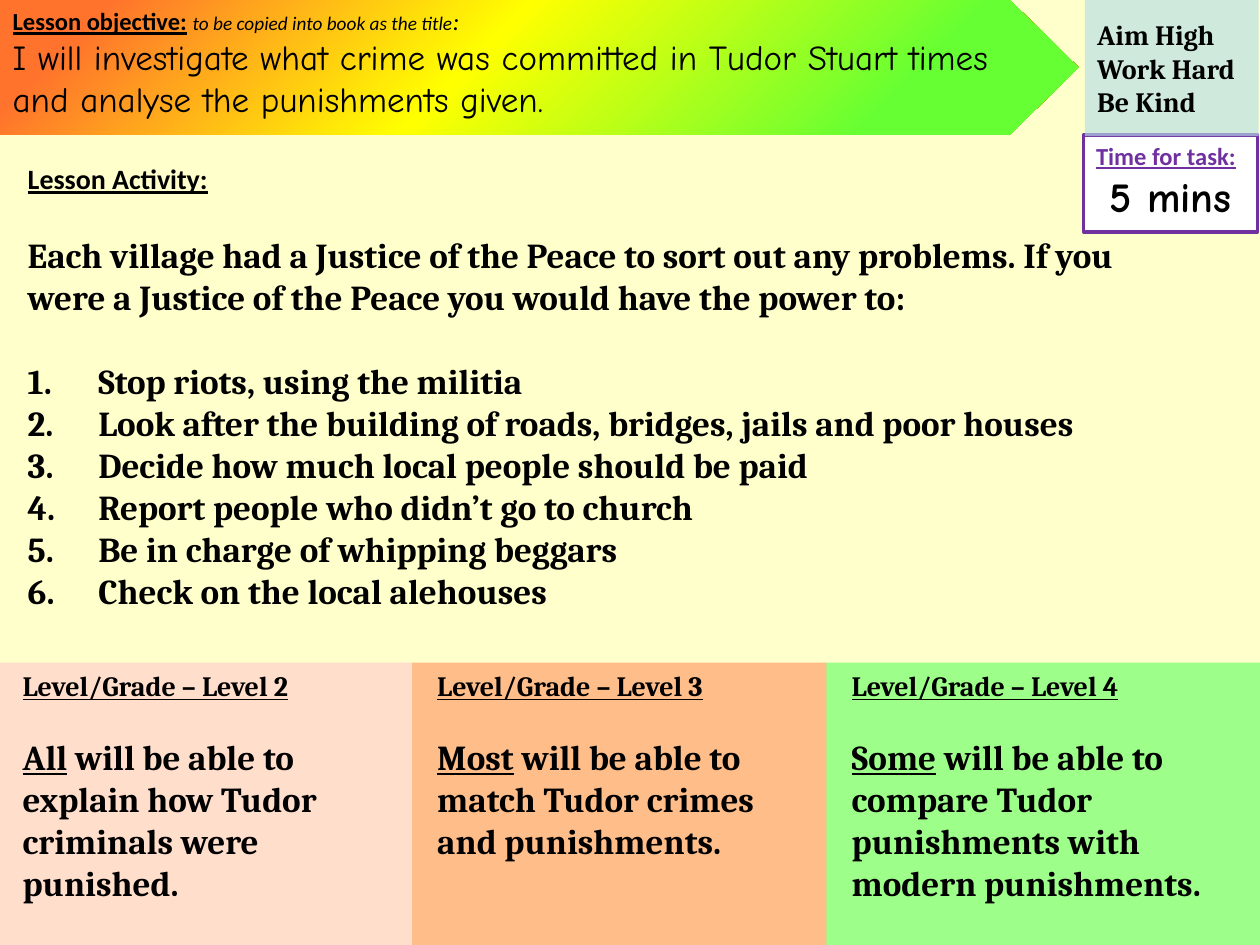
"""Build the Tudor crime and punishment lesson slide."""
from dataclasses import dataclass, replace

import lxml.etree
import pptx
import pptx.dml.color
import pptx.enum.shapes
import pptx.enum.text
import pptx.oxml
import pptx.oxml.ns
import pptx.util
from pptx.util import Inches

ALIGN = pptx.enum.text.PP_ALIGN
ANCHOR = pptx.enum.text.MSO_ANCHOR
SHAPE = pptx.enum.shapes.MSO_SHAPE
qn = pptx.oxml.ns.qn


@dataclass(frozen=True)
class Span:
    text: str
    size: float
    font: str = "Cambria"
    color: str = "000000"
    bold: bool = True
    italic: bool = False
    underline: bool = False


@dataclass(frozen=True)
class Line:
    spans: tuple[Span, ...]
    before: float = 0
    align: ALIGN = ALIGN.LEFT
    numbered: bool = False


@dataclass(frozen=True)
class Box:
    left: float
    top: float
    width: float
    height: float


@dataclass(frozen=True)
class Level:
    grade: int
    pupils: str
    outcome: str
    color: str
    width: float = 3.29


LEVELS = (
    Level(2, "All", " will be able to explain how Tudor criminals were punished.", "FFCCCC"),
    Level(3, "Most", " will be able to match Tudor crimes and punishments.", "FF9966"),
    Level(4, "Some", " will be able to compare Tudor punishments with modern punishments.",
          "66FF66", 3.47),
)
POWERS = (
    "Stop riots, using the militia",
    "Look after the building of roads, bridges, jails and poor houses",
    "Decide how much local people should be paid",
    "Report people who didn’t go to church",
    "Be in charge of whipping beggars",
    "Check on the local alehouses",
)
INTRO = ("Each village had a Justice of the Peace to sort out any problems. "
         "If you were a Justice of the Peace you would have the power to:")
OBJECTIVE = ("I will investigate what crime was committed in Tudor Stuart times "
             "and analyse the punishments given.")
RAINBOW = ((18, "66FF33"), (56, "FFFF00"), (91, "FF732D"))


def rgb(value: str) -> pptx.dml.color.RGBColor:
    return pptx.dml.color.RGBColor.from_string(value)


def place(shape, box: Box) -> None:
    shape.left, shape.top = Inches(box.left), Inches(box.top)
    shape.width, shape.height = Inches(box.width), Inches(box.height)


def set_bullet(paragraph, numbered: bool) -> None:
    properties = paragraph._p.get_or_add_pPr()
    indent = Inches(0.56) if numbered else 0
    properties.set("marL", str(indent))
    properties.set("indent", str(-indent))
    if numbered:
        lxml.etree.SubElement(properties, qn("a:buAutoNum"), type="arabicPeriod")
    else:
        lxml.etree.SubElement(properties, qn("a:buNone"))


def write(shape, lines: list[Line], anchor: ANCHOR = ANCHOR.TOP, inset: float = 0.1) -> None:
    frame = shape.text_frame
    frame.word_wrap = True
    frame.auto_size = pptx.enum.text.MSO_AUTO_SIZE.NONE
    frame.vertical_anchor = anchor
    frame.margin_left = Inches(inset)
    for index, line in enumerate(lines):
        paragraph = frame.add_paragraph() if index else frame.paragraphs[0]
        set_bullet(paragraph, line.numbered)
        paragraph.alignment = line.align
        paragraph.space_before = pptx.util.Pt(line.before)
        for span in line.spans:
            run = paragraph.add_run()
            run.text = span.text
            run.font.size = pptx.util.Pt(span.size)
            run.font.name = span.font
            run.font.color.rgb = rgb(span.color)
            run.font.bold = span.bold
            run.font.italic = span.italic
            run.font.underline = span.underline


def add_panel(slide, box: Box, color: str, opacity: int = 100, kind: SHAPE = SHAPE.RECTANGLE):
    panel = slide.shapes.add_shape(kind, 0, 0, 0, 0)
    place(panel, box)
    panel.shadow.inherit = False
    panel.fill.solid()
    panel.fill.fore_color.rgb = rgb(color)
    panel.line.fill.background()
    if opacity < 100:
        tint = panel._element.spPr.find(qn("a:solidFill")).find(qn("a:srgbClr"))
        lxml.etree.SubElement(tint, qn("a:alpha"), val=str(opacity * 1000))
    return panel


def set_rainbow(shape) -> None:
    stops = "".join(f'<a:gs pos="{position * 1000}"><a:srgbClr val="{color}"/></a:gs>'
                    for position, color in RAINBOW)
    gradient = pptx.oxml.parse_xml(
        f'<a:gradFill {pptx.oxml.ns.nsdecls("a")} rotWithShape="1"><a:gsLst>{stops}</a:gsLst>'
        '<a:path path="circle"><a:fillToRect l="100000" t="100000"/></a:path></a:gradFill>')
    properties = shape._element.spPr
    properties.replace(properties.find(qn("a:solidFill")), gradient)


def add_objective(slide) -> None:
    arrow = add_panel(slide, Box(0, 0, 8.56, 1.07), "FFFF00", kind=SHAPE.RIGHT_ARROW)
    arrow.adjustments[0], arrow.adjustments[1] = 1, 0.51
    set_rainbow(arrow)
    title = slide.shapes.title
    title._element.addprevious(arrow._element)
    place(title, Box(0, 0, 8.02, 1.07))
    label = Span("Lesson objective:", 14, "Calibri", underline=True)
    note = replace(label, bold=False, italic=True, underline=False)
    write(title, [
        Line((label, replace(label, text=" ", underline=False),
              replace(note, text="to be copied into book as the title", size=11),
              replace(note, text=":"))),
        Line((Span(OBJECTIVE, 20, "Comic Neue", bold=False),)),
    ])


def add_activity(slide) -> None:
    activity = slide.placeholders[1]
    place(activity, Box(0.12, 1.23, 9.06, 3.7))
    powers = [Line((Span(power, 20),), before=0 if index else 24, numbered=True)
              for index, power in enumerate(POWERS)]
    write(activity, [
        Line((Span("Lesson Activity:", 16, "Calibri", underline=True),)),
        Line((Span(INTRO, 20),), before=22),
        *powers,
    ])


def add_levels(slide) -> None:
    for index, level in enumerate(LEVELS):
        box = Box(3.29 * index - 0.02, 5.26, level.width, 2.24)
        panel = add_panel(slide, box, level.color, 64)
        write(panel, [
            Line((Span(f"Level/Grade – Level {level.grade}", 16, underline=True),)),
            Line((Span(level.pupils, 20, underline=True), Span(level.outcome, 20)), before=19),
        ], inset=0.2)


def add_corner(slide) -> None:
    timer = add_panel(slide, Box(8.6, 1.07, 1.38, 0.77), "FFFFFF")
    timer.line.color.rgb = rgb("7030A0")
    timer.line.width = pptx.util.Pt(2)
    write(timer, [
        Line((Span("Time for task:", 14, "Calibri", "7030A0", underline=True),)),
        Line((Span("5 mins", 24, "Comic Neue"),), align=ALIGN.CENTER),
    ])
    motto = add_panel(slide, Box(8.61, 0, 1.38, 1.08), "B7DEE8", 64)
    write(motto, [Line((Span(words, 16),)) for words in ("Aim High", "Work Hard", "Be Kind")],
          ANCHOR.MIDDLE)


def main() -> None:
    deck = pptx.Presentation()
    deck.slide_width, deck.slide_height = Inches(10), Inches(7.5)
    slide = deck.slides.add_slide(deck.slide_layouts[1])
    slide.background.fill.solid()
    slide.background.fill.fore_color.rgb = rgb("FFFFCC")
    add_levels(slide)
    add_activity(slide)
    add_objective(slide)
    add_corner(slide)
    deck.save("out.pptx")


if __name__ == "__main__":
    main()
